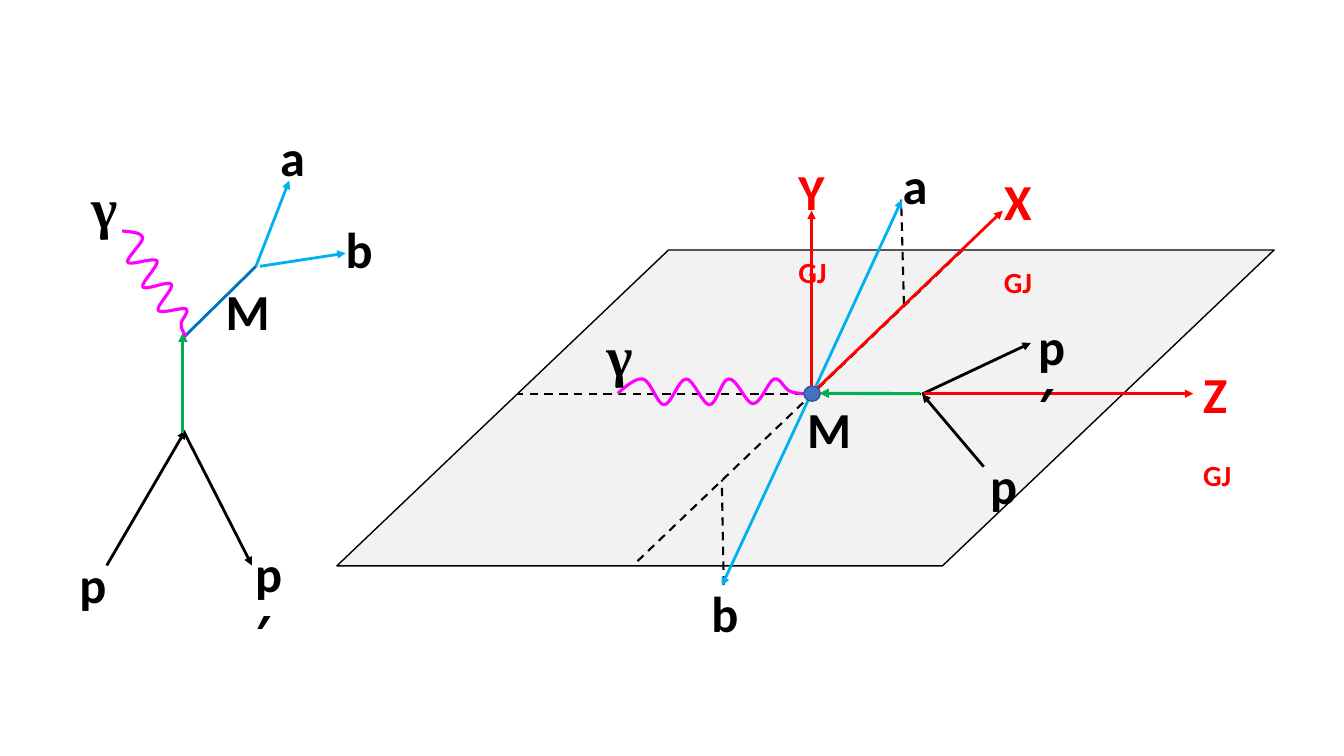
from dataclasses import dataclass
from typing import Optional

from lxml.etree import Element, SubElement
from pptx import Presentation
from pptx.dml.color import RGBColor
from pptx.enum.dml import MSO_LINE
from pptx.enum.shapes import MSO_CONNECTOR, MSO_SHAPE
from pptx.enum.text import MSO_AUTO_SIZE
from pptx.oxml.ns import qn
from pptx.util import Cm, Pt

BLACK, RED, GREEN = "000000", "FF0000", "00B050"
SKY, BLUE, MAGENTA = "00B0F0", "0070C0", "FF00FF"

WAVE_LENGTH, WAVE_HEIGHT = 192, 25
WAVE_START = (0, 14)
WAVE_CURVES = [
    ((9, 6), (18, -1), (25, 0)),
    ((33, 2), (39, 25), (46, 25)),
    ((53, 25), (60, 0), (68, 0)),
    ((75, 0), (84, 25), (91, 25)),
    ((98, 25), (103, 0), (110, 0)),
    ((118, -1), (127, 24), (134, 24)),
    ((142, 24), (149, 2), (155, 0)),
    ((161, -2), (165, 10), (171, 12)),
    ((177, 15), (192, 14), (192, 14)),
]


@dataclass
class Track:
    x1: float
    y1: float
    x2: float
    y2: float
    color: str = BLACK
    width: float = 2
    arrow: bool = True
    dashed: bool = False


@dataclass
class Photon:
    left: float
    top: float
    length: float
    height: float
    rotation: float = 0


@dataclass
class Label:
    text: str
    left: float
    top: float
    width: float
    subscript: Optional[str] = None
    color: str = BLACK
    font: str = "Calibri"
    size: float = 36


def guide(x1: float, y1: float, x2: float, y2: float) -> Track:
    return Track(x1, y1, x2, y2, width=1.5, arrow=False, dashed=True)


def axis_label(letter: str, left: float, top: float) -> Label:
    return Label(letter, left, top, 1.57, subscript="GJ", color=RED)


def photon_label(left: float, top: float) -> Label:
    return Label("γ", left, top, 0.94, font="Times New Roman", size=40)


TRACKS = [
    guide(24.26, 6.3, 15.95, 14.25),
    guide(28.4, 9.93, 13.05, 9.93),
    Track(23.24, 9.93, 25.98, 8.64),
    guide(22.78, 7.67, 22.71, 5.03),
    Track(20.47, 9.93, 22.73, 5.03, SKY),
    guide(18.24, 14.73, 18.19, 12.09),
    Track(20.47, 9.86, 18.19, 14.76, SKY),
    Track(20.6, 9.78, 25.27, 5.31, RED),
    Track(23.29, 9.92, 30.07, 9.92, RED),
    Track(20.45, 9.86, 20.45, 5.31, RED),
    Track(24.79, 11.76, 23.24, 9.93),
    Track(23.19, 9.92, 20.65, 9.91, GREEN, 2.25),
    Track(2.69, 14.25, 4.67, 10.85),
    Track(4.62, 10.85, 6.35, 14.25),
    Track(4.61, 10.92, 4.61, 8.38, GREEN, 2.25),
    Track(4.67, 8.46, 6.45, 6.71, BLUE, arrow=False),
    Track(6.45, 6.71, 7.29, 4.55, SKY),
    Track(6.55, 6.71, 8.71, 6.38, SKY),
]

PHOTONS = [
    Photon(15.57, 9.55, 4.88, 0.65),
    Photon(2.36, 6.81, 3.12, 0.65, 58.7),
]

LABELS = [
    axis_label("Y", 19.87, 3.91),
    axis_label("X", 25.05, 4.17),
    axis_label("Z", 30.07, 9.03),
    Label("a", 22.5, 3.76, 0.91),
    Label("b", 17.68, 14.54, 0.97),
    Label("p", 24.7, 11.33, 0.97),
    Label("p′", 25.91, 7.81, 1.52),
    photon_label(15.03, 7.95),
    Label("M", 20.09, 9.92, 1.32),
    photon_label(2.05, 4.23),
    Label("M", 5.44, 6.93, 1.32),
    Label("b", 8.46, 5.38, 0.97),
    Label("a", 6.81, 3.05, 0.91),
    Label("p", 1.75, 13.82, 0.97),
    Label("p′", 6.18, 13.53, 1.52),
]


def paint(target, color: str) -> None:
    target.solid()
    target.fore_color.rgb = RGBColor.from_string(color)


def draw_preset(shapes, preset, left: float, top: float, width: float,
                height: float, fill: str, outline: str):
    shape = shapes.add_shape(preset, Cm(left), Cm(top), Cm(width), Cm(height))
    shape.shadow.inherit = False
    paint(shape.fill, fill)
    paint(shape.line.fill, outline)
    shape.line.width = Pt(1)
    return shape


def draw_track(shapes, track: Track) -> None:
    connector = shapes.add_connector(
        MSO_CONNECTOR.STRAIGHT,
        Cm(track.x1), Cm(track.y1), Cm(track.x2), Cm(track.y2))
    line = connector.line
    paint(line.fill, track.color)
    line.width = Pt(track.width)
    if track.dashed:
        line.dash_style = MSO_LINE.DASH
    properties = connector._element.spPr
    if track.arrow:
        SubElement(properties.find(qn("a:ln")), qn("a:tailEnd"), type="triangle")
    SubElement(properties, qn("a:effectLst"))


def draw_photon(shapes, photon: Photon) -> None:
    def scaled(point: tuple[int, int]) -> tuple[int, int]:
        x, y = point
        return (Cm(x * photon.length / WAVE_LENGTH),
                Cm(y * photon.height / WAVE_HEIGHT))

    builder = shapes.build_freeform(*scaled(WAVE_START))
    builder.add_line_segments([scaled(curve[-1]) for curve in WAVE_CURVES], close=False)
    wave = builder.convert_to_shape(Cm(photon.left), Cm(photon.top))
    segments = list(wave._element.iter(qn("a:lnTo")))
    for segment, curve in zip(segments, WAVE_CURVES):
        bezier = Element(qn("a:cubicBezTo"))
        for x, y in map(scaled, curve):
            SubElement(bezier, qn("a:pt"), x=str(x), y=str(y))
        segment.getparent().replace(segment, bezier)
    wave.shadow.inherit = False
    wave.fill.background()
    paint(wave.line.fill, MAGENTA)
    wave.line.width = Pt(2.25)
    wave.rotation = photon.rotation


def draw_label(shapes, label: Label) -> None:
    frame = shapes.add_textbox(Cm(label.left), Cm(label.top), Cm(label.width),
                               Cm(label.size * 0.04)).text_frame
    frame.word_wrap = True
    frame.auto_size = MSO_AUTO_SIZE.SHAPE_TO_FIT_TEXT
    frame.text = label.text
    paragraph = frame.paragraphs[0]
    if label.subscript:
        subscript = paragraph.add_run()
        subscript.text = label.subscript
        subscript._r.get_or_add_rPr().set("baseline", "-25000")
    for run in paragraph.runs:
        run.font.name = label.font
        run.font.size = Pt(label.size)
        run.font.bold = True
        paint(run.font.fill, label.color)


def main() -> None:
    deck = Presentation()
    deck.slide_width, deck.slide_height = Cm(33.87), Cm(19.05)
    shapes = deck.slides.add_slide(deck.slide_layouts[6]).shapes
    plane = draw_preset(shapes, MSO_SHAPE.PARALLELOGRAM,
                        8.49, 6.3, 23.62, 7.96, "F2F2F2", BLACK)
    plane.adjustments[0] = 1.05
    for track in TRACKS:
        draw_track(shapes, track)
    for photon in PHOTONS:
        draw_photon(shapes, photon)
    draw_preset(shapes, MSO_SHAPE.OVAL, 20.26, 9.73, 0.41, 0.38, "4472C4", "325491")
    for label in LABELS:
        draw_label(shapes, label)
    deck.save("out.pptx")


if __name__ == "__main__":
    main()
